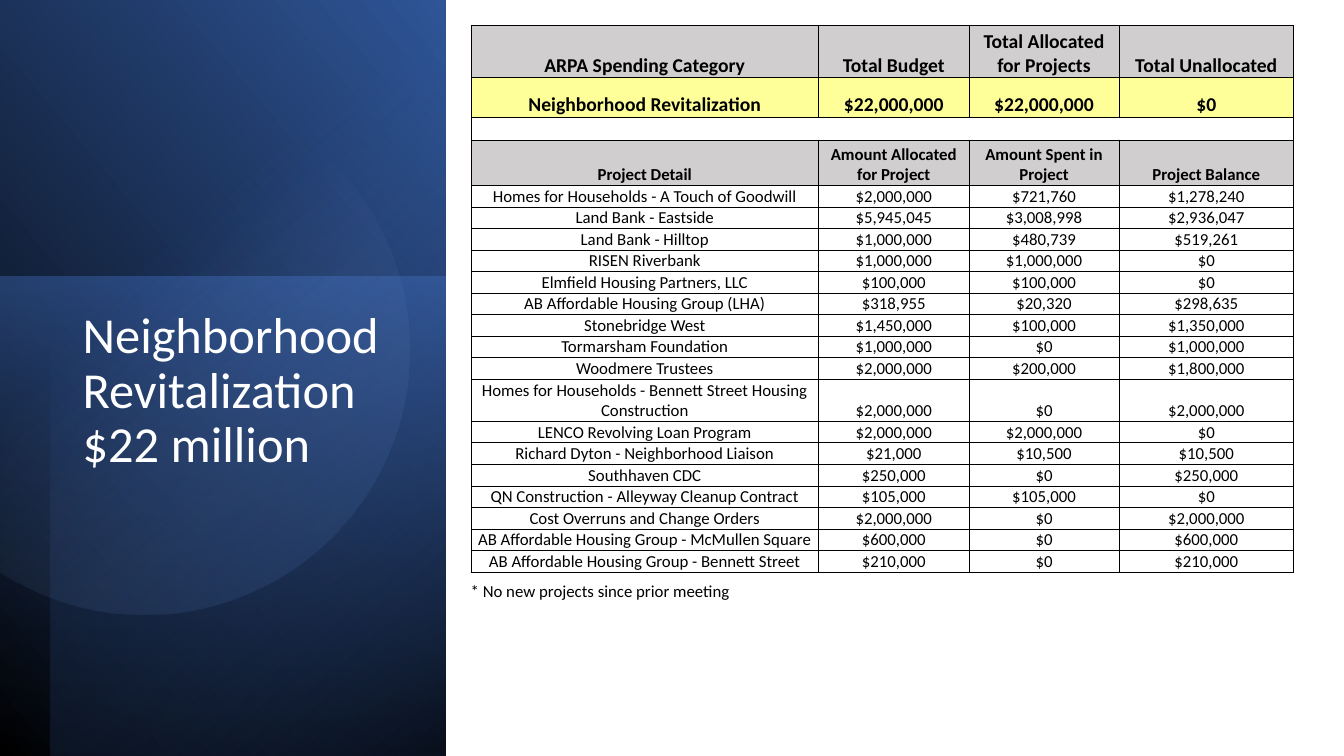
from math import cos, radians, sin

from lxml.etree import SubElement
from pptx import Presentation
from pptx.dml.color import RGBColor
from pptx.enum.shapes import MSO_SHAPE
from pptx.enum.text import MSO_ANCHOR, PP_ALIGN
from pptx.oxml.ns import qn
from pptx.util import Inches, Pt

BLACK = RGBColor(0x00, 0x00, 0x00)
WHITE = RGBColor(0xFF, 0xFF, 0xFF)
GREY = RGBColor(0xD0, 0xCE, 0xCE)
YELLOW = RGBColor(0xFF, 0xFF, 0x99)
BLUE = RGBColor(0x44, 0x72, 0xC4)
DEEP_BLUE = RGBColor(0x2F, 0x55, 0x97)
NAVY = RGBColor(0x20, 0x38, 0x64)
PALE_BLUE = RGBColor(0x8F, 0xAA, 0xDC)


def paint_gradient(shape, angle, stops):
    """Fill with two stops of (percent, colour, opacity percent); angle is clockwise."""
    shape.shadow.inherit = False
    shape.line.fill.background()
    shape.fill.gradient()
    shape.fill.gradient_angle = 360 - angle
    for stop, (position, color, opacity) in zip(shape.fill.gradient_stops, stops):
        stop.position = position / 100
        stop.color.rgb = color
    colors = shape._element.spPr.iter(qn("a:srgbClr"))
    for color_element, (position, color, opacity) in zip(colors, stops):
        SubElement(color_element, qn("a:alpha"), val=str(opacity * 1000))


def add_text(para, text, size, color, bold=False):
    span = para.add_run()
    span.text = text
    span.font.name = "Calibri"
    span.font.size = Pt(size)
    span.font.bold = bold
    span.font.color.rgb = color


deck = Presentation()
deck.slide_width, deck.slide_height = Inches(13.33), Inches(7.5)
page = deck.slides.add_slide(deck.slide_layouts[5])
shapes = page.shapes

# Layered gradient panels on the left: box, rotation, flipped, angle, stops
panels = [
    ((-1.55, 1.55, 7.52, 4.42), 90, True, 310, [(0, BLACK, 100), (100, DEEP_BLUE, 100)]),
    ((-0.17, 2.91, 4.76, 4.42), 270, False, 190, [(0, BLUE, 50), (100, NAVY, 0)]),
    ((-1.29, 1.79, 7.5, 3.92), 270, True, 220, [(0, BLACK, 59), (69, BLUE, 0)]),
]
for box, rotation, flipped, angle, stops in panels:
    panel = shapes.add_shape(MSO_SHAPE.RECTANGLE, *map(Inches, box))
    panel.rotation = rotation
    if flipped:
        panel._element.spPr.xfrm.set("flipH", "1")
    paint_gradient(panel, angle, stops)

# Disc cut off by the slide's left edge
CENTER_X, CENTER_Y, RADIUS, CUT_ANGLE = 1.43, 3.47, 2.63, 122.9
arc = []
for step in range(-60, 61):
    turn = radians(CUT_ANGLE * step / 60)
    arc.append((Inches(CENTER_X + RADIUS * cos(turn)), Inches(CENTER_Y + RADIUS * sin(turn))))
outline = shapes.build_freeform(*arc[0])
outline.add_line_segments(arc[1:], close=True)
paint_gradient(outline.convert_to_shape(), 51.6, [(39, PALE_BLUE, 0), (100, DEEP_BLUE, 26)])

# Title, moved in front of the panels
title = shapes.title
shapes._spTree.append(title._element)
title.left, title.top, title.width, title.height = map(Inches, (0.72, 3.03, 3.15, 3.36))
title.text_frame.word_wrap = True
title.text_frame.vertical_anchor = MSO_ANCHOR.TOP
para = title.text_frame.paragraphs[0]
para.alignment = PP_ALIGN.LEFT
para.line_spacing = 0.9
add_text(para, "Neighborhood Revitalization $22 million", 36, WHITE)

# Budget table
rows = [
    ("ARPA Spending Category", "Total Budget", "Total Allocated for Projects", "Total Unallocated"),
    ("Neighborhood Revitalization", "$22,000,000", "$22,000,000", "$0"),
    ("", "", "", ""),
    ("Project Detail", "Amount Allocated for Project", "Amount Spent in Project", "Project Balance"),
    ("Homes for Households - A Touch of Goodwill", "$2,000,000", "$721,760", "$1,278,240"),
    ("Land Bank - Eastside", "$5,945,045", "$3,008,998", "$2,936,047"),
    ("Land Bank - Hilltop", "$1,000,000", "$480,739", "$519,261"),
    ("RISEN Riverbank", "$1,000,000", "$1,000,000", "$0"),
    ("Elmfield Housing Partners, LLC", "$100,000", "$100,000", "$0"),
    ("AB Affordable Housing Group (LHA)", "$318,955", "$20,320", "$298,635"),
    ("Stonebridge West", "$1,450,000", "$100,000", "$1,350,000"),
    ("Tormarsham Foundation", "$1,000,000", "$0", "$1,000,000"),
    ("Woodmere Trustees", "$2,000,000", "$200,000", "$1,800,000"),
    ("Homes for Households - Bennett Street Housing Construction", "$2,000,000", "$0", "$2,000,000"),
    ("LENCO Revolving Loan Program", "$2,000,000", "$2,000,000", "$0"),
    ("Richard Dyton - Neighborhood Liaison", "$21,000", "$10,500", "$10,500"),
    ("Southhaven CDC", "$250,000", "$0", "$250,000"),
    ("QN Construction - Alleyway Cleanup Contract", "$105,000", "$105,000", "$0"),
    ("Cost Overruns and Change Orders", "$2,000,000", "$0", "$2,000,000"),
    ("AB Affordable Housing Group - McMullen Square", "$600,000", "$0", "$600,000"),
    ("AB Affordable Housing Group - Bennett Street", "$210,000", "$0", "$210,000"),
]
SPACER_ROW = 2
row_heights = {0: 0.52, 1: 0.39, SPACER_ROW: 0.23, 3: 0.45, 13: 0.42}
row_fills = {0: GREY, 1: YELLOW, 3: GREY}

frame = shapes.add_table(len(rows), 4, Inches(4.67), Inches(0.25), Inches(8.16), Inches(5.37))
table = frame.table
table.first_row = table.horz_banding = False
for column, width in zip(table.columns, (3.45, 1.49, 1.49, 1.73)):
    column.width = Inches(width)
table.cell(SPACER_ROW, 0).merge(table.cell(SPACER_ROW, 3))

for row_index, texts in enumerate(rows):
    table.rows[row_index].height = Inches(row_heights.get(row_index, 0.21))
    for column_index, text in enumerate(texts):
        cell = table.cell(row_index, column_index)
        cell.margin_left = cell.margin_right = Inches(0.03 if row_index == 0 else 0.01)
        cell.margin_top = Inches(0 if row_index == 0 else 0.01)
        cell.margin_bottom = 0
        cell.vertical_anchor = MSO_ANCHOR.BOTTOM
        for side in ("a:lnL", "a:lnR", "a:lnT", "a:lnB"):
            border = SubElement(cell._tc.get_or_add_tcPr(), qn(side), w=str(Pt(0.5)))
            SubElement(SubElement(border, qn("a:solidFill")), qn("a:srgbClr"), val=str(BLACK))
        if row_index in row_fills:
            cell.fill.solid()
            cell.fill.fore_color.rgb = row_fills[row_index]
        else:
            cell.fill.background()
        para = cell.text_frame.paragraphs[0]
        para.alignment = PP_ALIGN.CENTER
        if text:
            add_text(para, text, 14 if row_index < 2 else 12, BLACK, bold=row_index < 4)
        else:
            SubElement(para._p, qn("a:endParaRPr"), sz="1200")

# Footnote
footnote = shapes.add_textbox(Inches(4.57), Inches(5.71), Inches(4.23), Inches(0.3))
footnote.text_frame.word_wrap = True
add_text(footnote.text_frame.paragraphs[0], "* No new projects since prior meeting", 12, BLACK)

deck.save("out.pptx")
